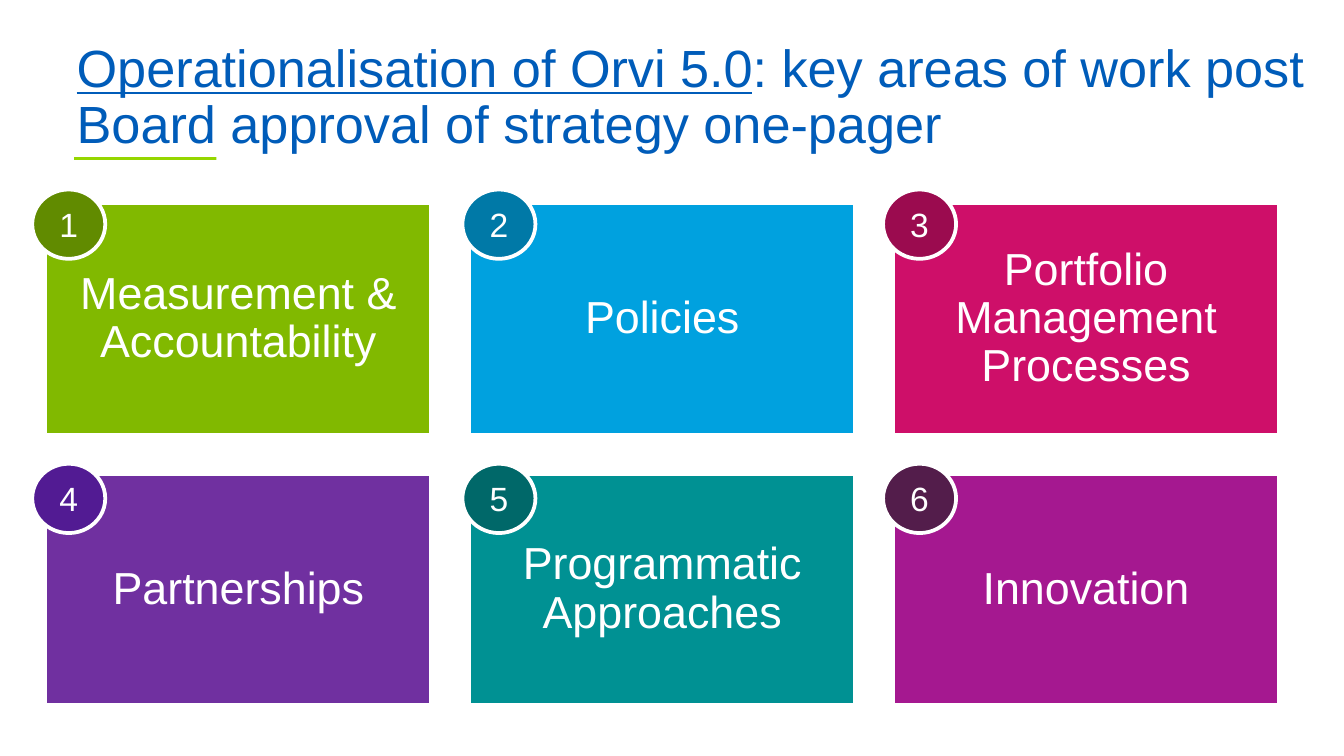
from dataclasses import dataclass

from pptx import Presentation
from pptx.dml.color import RGBColor
from pptx.enum.shapes import MSO_SHAPE
from pptx.enum.text import MSO_ANCHOR, PP_ALIGN
from pptx.util import Cm, Pt

RECTANGLE, OVAL = MSO_SHAPE.RECTANGLE, MSO_SHAPE.OVAL
MIDDLE, BOTTOM = MSO_ANCHOR.MIDDLE, MSO_ANCHOR.BOTTOM
LEFT, CENTER = PP_ALIGN.LEFT, PP_ALIGN.CENTER


@dataclass(frozen=True)
class Theme:
    font: str = "Arial"
    title_size: int = 28
    card_size: int = 24
    badge_size: int = 18
    outline_width: int = 2
    line_spacing: float = 0.9
    title: str = "005CB9"
    accent: str = "95D600"
    white: str = "FFFFFF"


# Label, card colour, badge colour
WORK_AREAS = [
    ("Measurement & Accountability", "81B900", "618B00"),
    ("Policies", "00A1DF", "0079A7"),
    ("Portfolio Management Processes", "CE0F69", "9B0B4F"),
    ("Partnerships", "7030A0", "521B93"),
    ("Programmatic Approaches", "009193", "006869"),
    ("Innovation", "A51890", "531D4B"),
]

# Grid measures in centimetres
COLUMNS = 3
CARD_LEFT, CARD_TOP = 0.86, 3.84
CARD_WIDTH, CARD_HEIGHT = 7.29, 4.37
COLUMN_STEP, ROW_STEP = 8.01, 5.11
BADGE_LEFTS = (0.61, 8.74, 16.69)
BADGE_TOP, BADGE_STEP = 3.58, 5.18
BADGE_WIDTH, BADGE_HEIGHT = 1.38, 1.31


class SlideBuilder:
    def __init__(self, slide, theme):
        self.slide = slide
        self.theme = theme

    def set_text(self, frame, runs, size, color, align, anchor, inset=0, spacing=1.0):
        margin = Cm(inset)
        frame_format = {
            "word_wrap": True, "vertical_anchor": anchor,
            "margin_left": margin, "margin_right": margin,
            "margin_top": margin, "margin_bottom": margin,
        }
        for name, value in frame_format.items():
            setattr(frame, name, value)
        paragraph = frame.paragraphs[0]
        paragraph.alignment = align
        paragraph.line_spacing = spacing
        for text, underline in runs:
            run = paragraph.add_run()
            run.text = text
            font_format = {"name": self.theme.font, "size": Pt(size), "underline": underline}
            for name, value in font_format.items():
                setattr(run.font, name, value)
            run.font.color.rgb = RGBColor.from_string(color)

    def shape(self, kind, box, fill, outlined=True):
        shape = self.slide.shapes.add_shape(kind, *map(Cm, box))
        shape.shadow.inherit = False
        shape.fill.solid()
        shape.fill.fore_color.rgb = RGBColor.from_string(fill)
        if outlined:
            shape.line.color.rgb = RGBColor.from_string(self.theme.white)
            shape.line.width = Pt(self.theme.outline_width)
        else:
            shape.line.fill.background()
        return shape

    def title(self, runs, box):
        frame = self.slide.shapes.add_textbox(*map(Cm, box)).text_frame
        self.set_text(frame, runs, self.theme.title_size, self.theme.title,
                      LEFT, BOTTOM, spacing=self.theme.line_spacing)

    def accent_rule(self, box):
        self.shape(RECTANGLE, box, self.theme.accent, outlined=False)

    def card(self, label, box, fill):
        card = self.shape(RECTANGLE, box, fill)
        self.set_text(card.text_frame, [(label, False)], self.theme.card_size, self.theme.white,
                      CENTER, MIDDLE, inset=0.25, spacing=self.theme.line_spacing)

    def badge(self, number, box, fill):
        badge = self.shape(OVAL, box, fill)
        self.set_text(badge.text_frame, [(str(number), False)], self.theme.badge_size,
                      self.theme.white, CENTER, MIDDLE)


def main():
    presentation = Presentation()
    presentation.slide_width, presentation.slide_height = Cm(25.4), Cm(14.28)
    slide = presentation.slides.add_slide(presentation.slide_layouts[6])
    builder = SlideBuilder(slide, Theme())

    # Heading
    builder.accent_rule((1.4, 2.97, 2.69, 0.05))
    builder.title([
        ("Operationalisation of Orvi 5.0", True),
        (": key areas of work post Board approval of strategy one-pager", False),
    ], (1.45, 0.64, 23.75, 2.29))

    # Work area cards
    for index, (label, card_color, _) in enumerate(WORK_AREAS):
        row, column = divmod(index, COLUMNS)
        builder.card(label, (CARD_LEFT + column * COLUMN_STEP, CARD_TOP + row * ROW_STEP,
                             CARD_WIDTH, CARD_HEIGHT), card_color)

    # Number badges over the card corners
    for index, (_, _, badge_color) in enumerate(WORK_AREAS):
        row, column = divmod(index, COLUMNS)
        builder.badge(index + 1, (BADGE_LEFTS[column], BADGE_TOP + row * BADGE_STEP,
                                  BADGE_WIDTH, BADGE_HEIGHT), badge_color)

    presentation.save("out.pptx")


if __name__ == "__main__":
    main()
